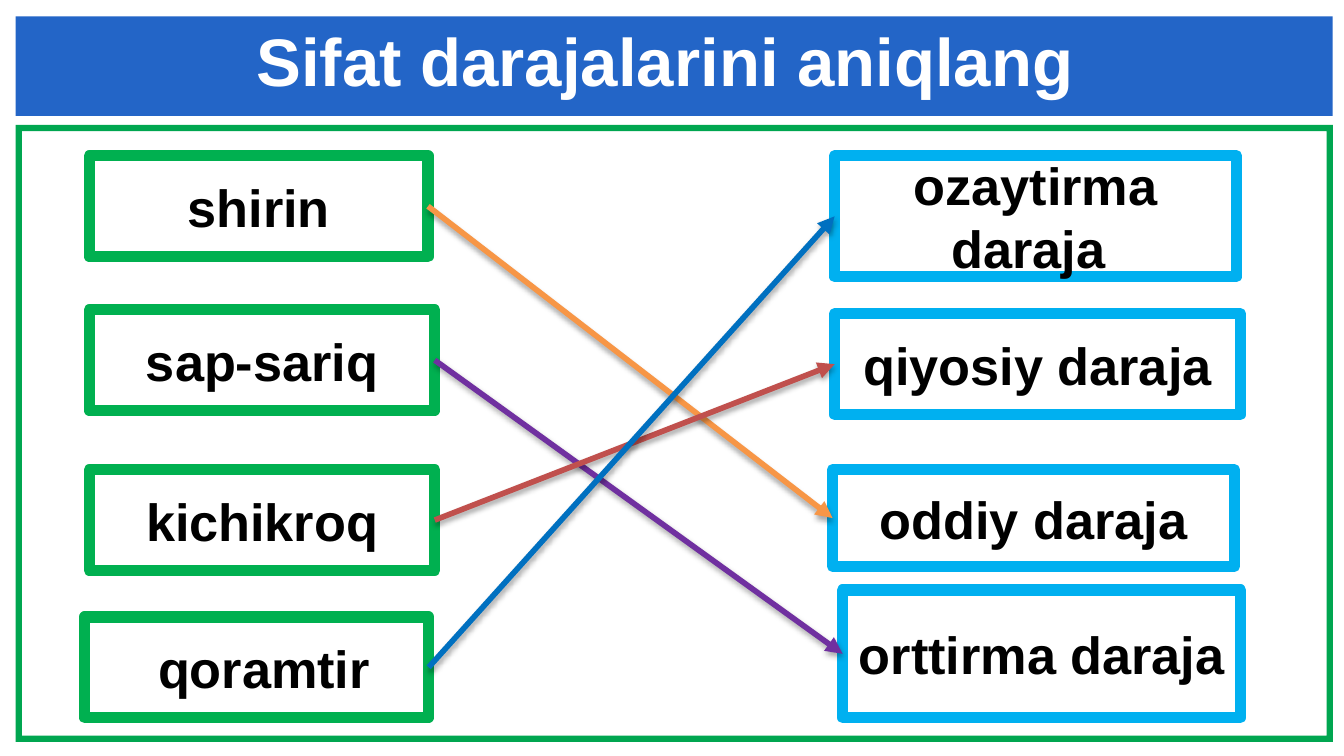
from dataclasses import dataclass

from lxml.etree import SubElement
from pptx import Presentation
from pptx.dml.color import RGBColor
from pptx.enum.shapes import MSO_CONNECTOR, MSO_SHAPE
from pptx.enum.text import MSO_ANCHOR, MSO_AUTO_SIZE, PP_ALIGN
from pptx.oxml.ns import qn
from pptx.util import Inches, Pt


@dataclass(frozen=True)
class Theme:
    font: str = "Arial"
    head: int = 36
    body: int = 28
    edge: int = 6
    arrow: int = 3
    white: str = "FFFFFF"
    black: str = "000000"
    band: str = "2365C7"
    frame: str = "00A650"
    word: str = "00B050"
    grade: str = "00B0F0"


LOOK = Theme()
COLS, ROWS = 100, 56.25  # square grid cells over the whole 16:9 slide
CELL = Inches(0.1)
LEFT, RIGHT = 1, 3  # connection sites of a rectangle

# Text, column, row, columns wide, rows high
WORDS = [
    ("shirin", 6.65, 11.6, 25.2, 7.5),
    ("sap-sariq", 6.65, 23.05, 25.7, 7.5),
    ("kichikroq", 6.65, 34.95, 25.7, 7.5),
    (" qoramtir", 6.3, 45.9, 25.6, 7.5),
]
GRADES = [
    ("ozaytirma daraja ", 62.1, 11.6, 29.9, 9),
    ("qiyosiy daraja", 62.1, 23.35, 30.2, 7.5),
    ("oddiy daraja", 61.95, 34.95, 29.9, 7.2),
    ("orttirma daraja", 62.7, 43.9, 29.6, 9.5),
]
# Word, its grade, arrow colour
PAIRS = [(0, 2, "F79646"), (1, 3, "7030A0"), (2, 1, "C0504D"), (3, 0, "0070C0")]


def rgb(code):
    return RGBColor.from_string(code)


def grid(*cells):
    return [round(n * CELL) for n in cells]


def write(frame, text, size, color):
    """Put one centred bold run into a text frame."""
    frame.word_wrap = True
    para = frame.paragraphs[0]
    para.alignment = PP_ALIGN.CENTER
    run = para.add_run()
    run.text = text
    font = run.font
    font.name, font.size, font.bold = LOOK.font, Pt(size), True
    font.color.rgb = rgb(color)


def panel(slide, kind, place, fill):
    """Add a flat shape without an outline."""
    shape = slide.shapes.add_shape(kind, *grid(*place))
    shape.shadow.inherit = False
    shape.fill.solid()
    shape.fill.fore_color.rgb = rgb(fill)
    shape.line.fill.background()
    return shape


def card(slide, color, text, *place):
    """Add a white box with a thick edge and a label."""
    box = panel(slide, MSO_SHAPE.RECTANGLE, place, LOOK.white)
    box.line.color.rgb = rgb(color)
    box.line.width = Pt(LOOK.edge)
    box.text_frame.vertical_anchor = MSO_ANCHOR.MIDDLE
    write(box.text_frame, text, LOOK.body, LOOK.black)
    return box


def arrow(slide, start, end, color):
    """Join two boxes with a softly shadowed arrow."""
    link = slide.shapes.add_connector(MSO_CONNECTOR.STRAIGHT, 0, 0, 0, 0)
    link.begin_connect(start, RIGHT)
    link.end_connect(end, LEFT)
    link.line.color.rgb = rgb(color)
    link.line.width = Pt(LOOK.arrow)
    SubElement(link.line._get_or_add_ln(), qn("a:tailEnd"), type="triangle")
    fx = SubElement(link._element.spPr, qn("a:effectLst"))
    shade = SubElement(fx, qn("a:outerShdw"), blurRad=str(Pt(3.1)),
                       dist=str(Pt(1.8)), dir="5400000", rotWithShape="0")
    tint = SubElement(shade, qn("a:srgbClr"), val=LOOK.black)
    SubElement(tint, qn("a:alpha"), val="35000")


def header(slide, text):
    """Place the title above the shapes drawn so far."""
    title = slide.shapes.title
    title.left, title.top, title.width, title.height = grid(7, 1.45, 85, 6.1)
    frame = title.text_frame
    frame.margin_left = frame.margin_right = 0
    frame.margin_top = frame.margin_bottom = 0
    frame.vertical_anchor = MSO_ANCHOR.TOP
    frame.auto_size = MSO_AUTO_SIZE.SHAPE_TO_FIT_TEXT
    write(frame, text, LOOK.head, LOOK.white)
    slide.shapes._spTree.append(title._element)


def main():
    deck = Presentation()
    deck.slide_width, deck.slide_height = grid(COLS, ROWS)
    slide = deck.slides.add_slide(deck.slide_layouts[5])

    # Backdrop
    rim = panel(slide, MSO_SHAPE.FRAME, (1.17, 9.3, 98, 45.9), LOOK.frame)
    rim.adjustments[0] = 0.01
    panel(slide, MSO_SHAPE.RECTANGLE, (1.17, 1.23, 98, 7.4), LOOK.band)

    # Words and grades, then the matching arrows
    words = [card(slide, LOOK.word, *item) for item in WORDS]
    grades = [card(slide, LOOK.grade, *item) for item in GRADES]
    for word, grade, color in PAIRS:
        arrow(slide, words[word], grades[grade], color)

    header(slide, "Sifat darajalarini aniqlang")
    deck.save("out.pptx")


if __name__ == "__main__":
    main()
